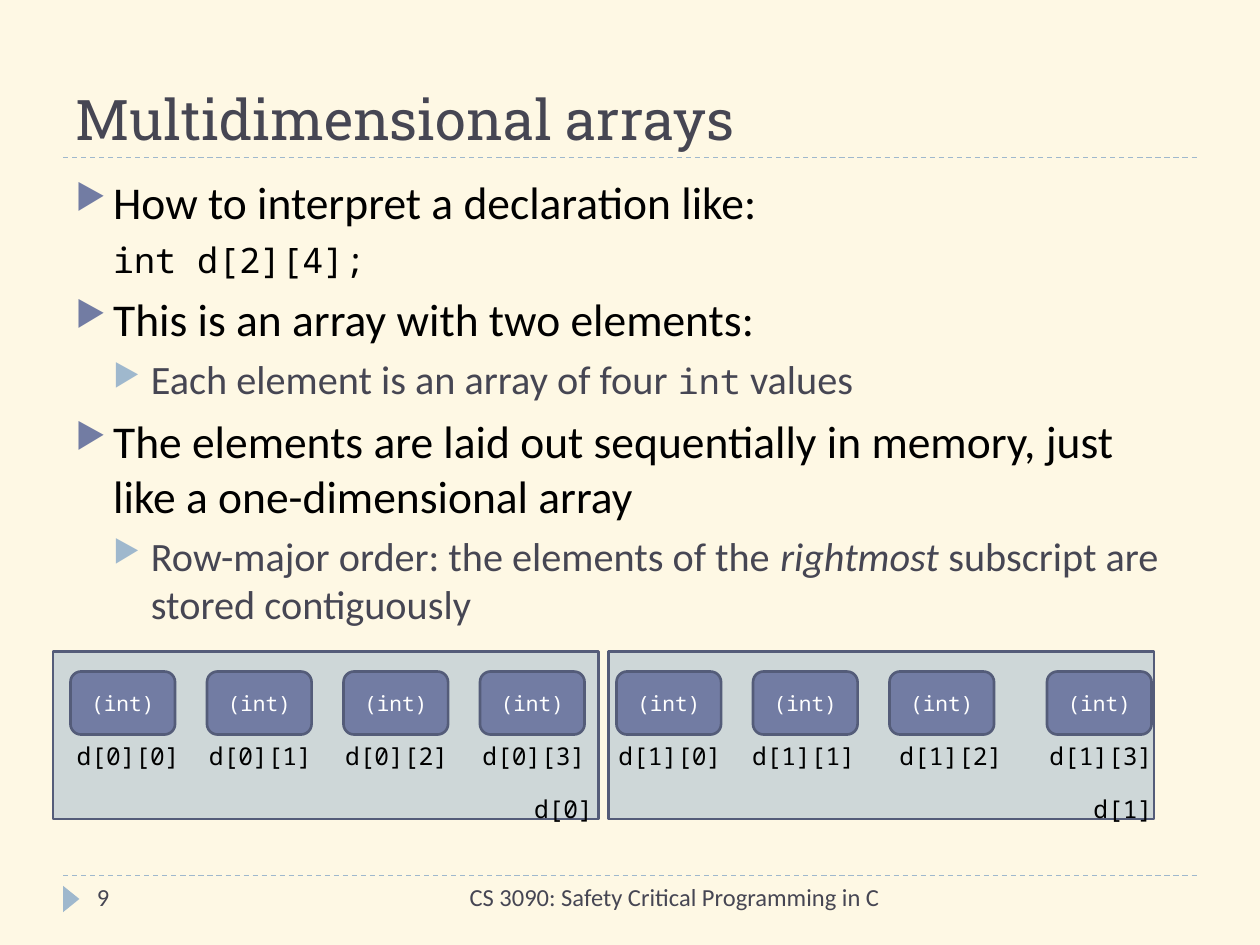
from dataclasses import dataclass
from typing import Optional

from lxml.etree import SubElement
from pptx import Presentation
from pptx.dml.color import RGBColor
from pptx.enum.dml import MSO_LINE
from pptx.enum.shapes import MSO_CONNECTOR, MSO_SHAPE
from pptx.enum.text import MSO_ANCHOR, MSO_AUTO_SIZE, PP_ALIGN
from pptx.oxml.ns import qn
from pptx.util import Inches, Pt

SANS, MONO, SLAB = "Calibri", "Noto Sans Mono", "Roboto Slab"
INK, BLACK, WHITE = "464653", "000000", "FFFFFF"
PALE, BLUE, EDGE = "9FB8CD", "727CA3", "545C79"


@dataclass
class Style:
    size: float
    face: str = SANS
    color: str = INK
    italic: Optional[bool] = None


@dataclass
class Box:
    left: float
    top: float
    width: float
    height: float

    def lengths(self) -> tuple:
        return tuple(map(Inches, (self.left, self.top, self.width, self.height)))


@dataclass
class Item:
    runs: list
    level: int = 0
    bullet: bool = True


HEAD = Style(26, color=BLACK)
SUB = Style(23)
CODE = Style(20, MONO, BLACK)
TAG = Style(14, MONO, BLACK)
SMALL = Style(14)

ITEMS = [
    Item([("How to interpret a declaration like:", HEAD)]),
    Item([("\tint d[2][4];", CODE)], bullet=False),
    Item([("This is an array with two elements:", HEAD)]),
    Item([("Each element is an array of four ", SUB),
          ("int", Style(20, MONO)), (" values", SUB)], 1),
    Item([("The elements are laid out sequentially in memory, "
           "just like a one-dimensional array", HEAD)]),
    Item([("Row-major order: the elements of the ", SUB),
          ("rightmost", Style(23, italic=True)),
          (" subscript are stored contiguously", SUB)], 1),
]


def paint(color: str) -> RGBColor:
    return RGBColor.from_string(color)


def dress(font, style: Style) -> None:
    font.size = Pt(style.size)
    font.name = style.face
    font.italic = style.italic
    font.color.rgb = paint(style.color)


def add_text(slide, box: Box, text: str, style: Style,
             align=PP_ALIGN.LEFT, anchor=MSO_ANCHOR.TOP, wrap: bool = True) -> None:
    frame = slide.shapes.add_textbox(*box.lengths()).text_frame
    frame.word_wrap = wrap
    if not wrap:
        frame.auto_size = MSO_AUTO_SIZE.SHAPE_TO_FIT_TEXT
    frame.vertical_anchor = anchor
    para = frame.paragraphs[0]
    para.text = text
    para.alignment = align
    dress(para.font, style)


def add_shape(slide, kind, box: Box, fill: str, edge: Optional[str] = None):
    shape = slide.shapes.add_shape(kind, *box.lengths())
    shape.shadow.inherit = False
    shape.fill.solid()
    shape.fill.fore_color.rgb = paint(fill)
    if edge:
        shape.line.color.rgb = paint(edge)
        shape.line.width = Pt(1.5)
    else:
        shape.line.fill.background()
    return shape


def add_rule(slide, top: float) -> None:
    rule = slide.shapes.add_connector(
        MSO_CONNECTOR.STRAIGHT, Inches(0.5), Inches(top), Inches(9.5), Inches(top))
    rule.line.color.rgb = paint(PALE)
    rule.line.width = Pt(0.75)
    rule.line.dash_style = MSO_LINE.DASH
    SubElement(rule._element.spPr, qn("a:effectLst"))


def add_row(slide, left: float) -> None:
    row = add_shape(slide, MSO_SHAPE.RECTANGLE, Box(left, 5.17, 4.33, 1.33), PALE, EDGE)
    color = row._element.spPr.find(f"{qn('a:solidFill')}/{qn('a:srgbClr')}")
    SubElement(color, qn("a:alpha"), val="50000")


def add_cell(slide, left: float) -> None:
    cell = add_shape(slide, MSO_SHAPE.ROUNDED_RECTANGLE,
                     Box(left, 5.33, 0.83, 0.5), BLUE, EDGE)
    frame = cell.text_frame
    frame.vertical_anchor = MSO_ANCHOR.MIDDLE
    para = frame.paragraphs[0]
    para.text = "(int)"
    para.alignment = PP_ALIGN.CENTER
    dress(para.font, Style(12, MONO, WHITE))


def add_item(para, item: Item) -> None:
    para.level = item.level
    para.space_before = Pt(6 - item.level)
    props = para._p.get_or_add_pPr()
    props.set("marL", str(Inches(0.3 * (item.level + 1))))
    props.set("indent", str(Inches(-0.3)))
    if item.bullet:
        tint = SubElement(props, qn("a:buClr"))
        SubElement(tint, qn("a:srgbClr"), val=PALE if item.level else BLUE)
        SubElement(props, qn("a:buSzPct"), val="76000")
        SubElement(props, qn("a:buChar"), char="▶")
    else:
        SubElement(props, qn("a:buNone"))
    for text, style in item.runs:
        run = para.add_run()
        run.text = text
        dress(para.font if len(item.runs) == 1 else run.font, style)


def add_body(slide) -> None:
    frame = slide.shapes.add_textbox(*Box(0.5, 1.33, 9, 5.4).lengths()).text_frame
    frame.word_wrap = True
    for index, item in enumerate(ITEMS):
        add_item(frame.add_paragraph() if index else frame.paragraphs[0], item)


def main() -> None:
    deck = Presentation()
    deck.slide_width, deck.slide_height = Inches(10), Inches(7.5)
    slide = deck.slides.add_slide(deck.slide_layouts[6])
    slide.background.fill.solid()
    slide.background.fill.fore_color.rgb = paint("FEF8E4")

    for top in (6.95, 1.25):
        add_rule(slide, top)
    mark = add_shape(slide, MSO_SHAPE.ISOSCELES_TRIANGLE, Box(0.46, 7.07, 0.21, 0.13), PALE)
    mark.rotation = 90
    for left in (4.83, 0.42):
        add_row(slide, left)

    add_text(slide, Box(0.5, 0.17, 9, 1.08), "Multidimensional arrays",
             Style(32, SLAB), anchor=MSO_ANCHOR.BOTTOM)
    add_text(slide, Box(3.17, 6.95, 3.91, 0.4),
             "CS 3090: Safety Critical Programming in C", SMALL, PP_ALIGN.RIGHT)
    add_text(slide, Box(0.67, 6.95, 2.17, 0.4), "9", SMALL)
    add_body(slide)

    cells = [0.56 + 6.5 / 6 * step for step in range(7)] + [8.31]
    for left in cells:
        add_cell(slide, left)
    tags = (0.51, 1.56, 2.64, 3.73, 4.81, 5.87, 7.04, 8.23)
    for index, left in enumerate(tags):
        row, col = divmod(index, 4)
        add_text(slide, Box(left, 5.83, 1.02, 0.34), f"d[{row}][{col}]", TAG, wrap=False)
    for row, left in enumerate((4.14, 8.58)):
        add_text(slide, Box(left, 6.25, 0.67, 0.34), f"d[{row}]", TAG, wrap=False)

    deck.save("out.pptx")


if __name__ == "__main__":
    main()
